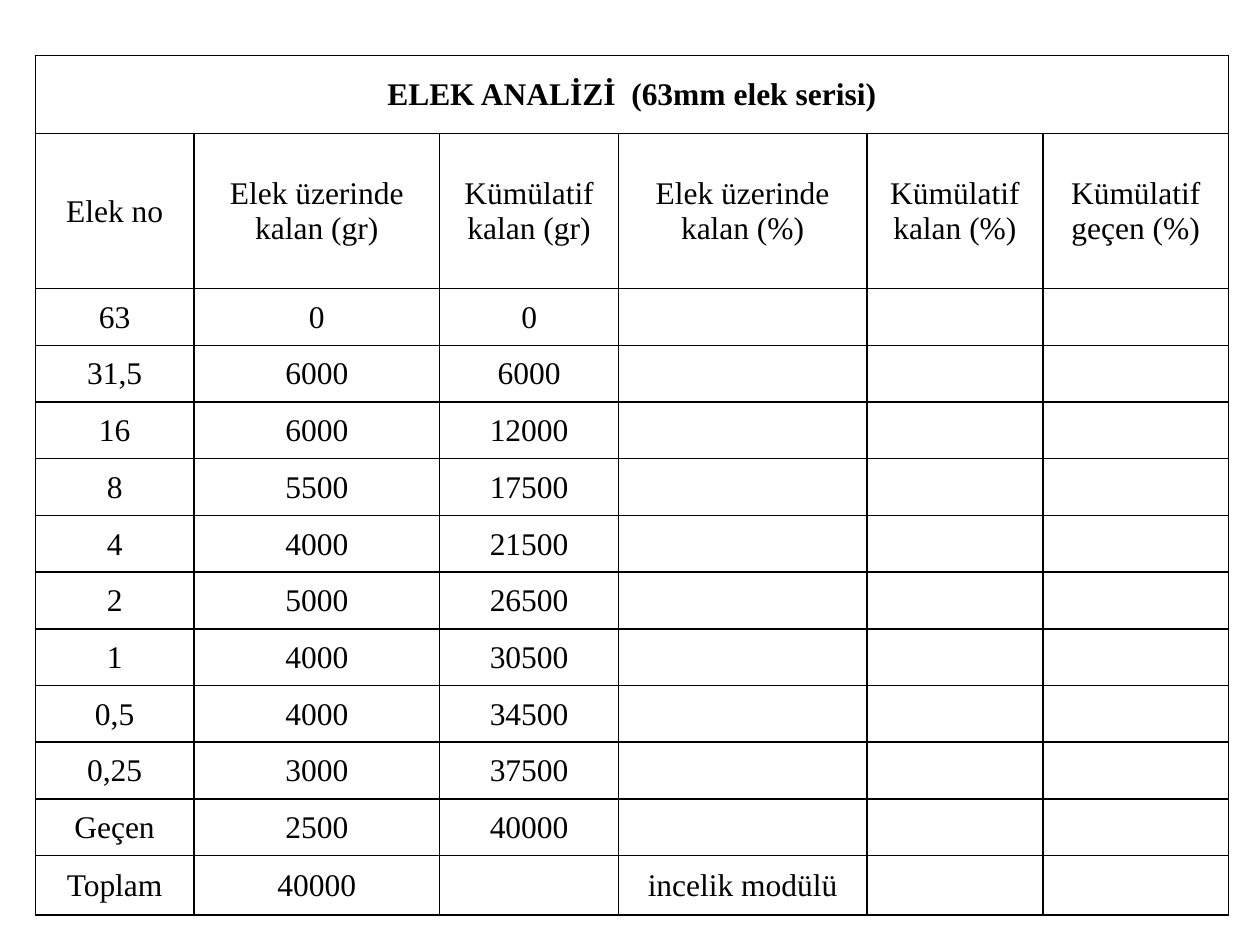
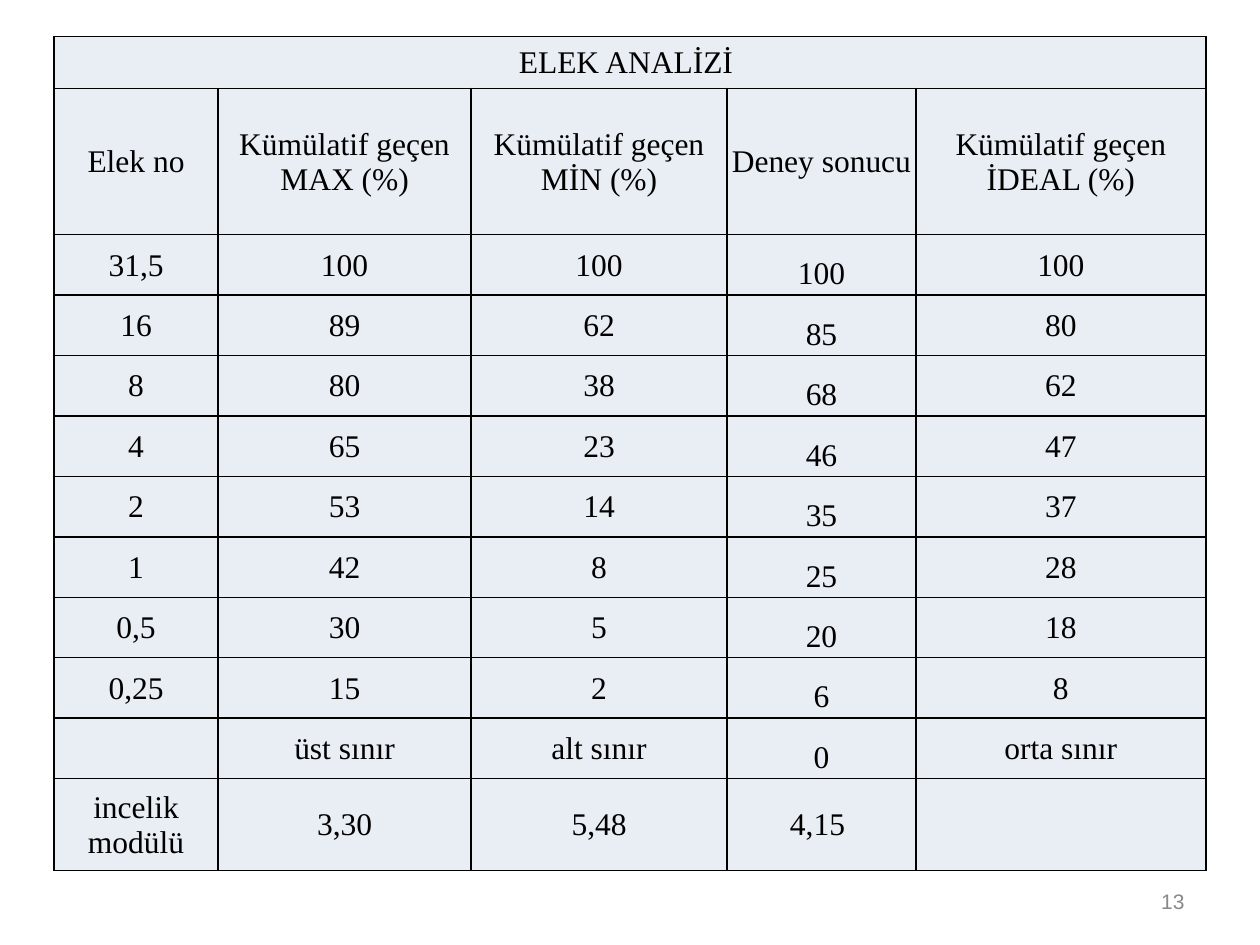
from dataclasses import dataclass
from itertools import accumulate

from lxml import etree
from pptx import Presentation
from pptx.dml.color import RGBColor
from pptx.enum.text import MSO_ANCHOR, PP_ALIGN
from pptx.oxml.ns import qn
from pptx.util import Inches, Pt

CENTER, RIGHT = PP_ALIGN.CENTER, PP_ALIGN.RIGHT
MIDDLE = MSO_ANCHOR.MIDDLE

COLORS = {"text": "000000", "border": "000000", "cell": "E9EDF4", "number": "898989"}
TABLE_FONT, NUMBER_FONT = "Times New Roman", "Arial"
SLIDE_WIDTH, SLIDE_HEIGHT = Inches(10), Inches(7.5)
BORDER_SIDES = ("a:lnL", "a:lnR", "a:lnT", "a:lnB")
HEADER_ROWS = 2


@dataclass(frozen=True)
class SieveTable:
    """A titled table; all lengths are percentages of the slide's size."""
    title: str
    headers: tuple[str, ...]
    body: list[tuple[str, ...]]
    left: float
    top: float
    columns: tuple[float, ...]
    rows: tuple[float, ...]
    fill: str | None = None
    bold_title: bool = False
    tall_column: int | None = None  # numbers here have 1.5 line spacing


def across(percent: float) -> int:
    return round(SLIDE_WIDTH * percent / 100)


def down(percent: float) -> int:
    return round(SLIDE_HEIGHT * percent / 100)


def format_text(paragraph, font: str, size: int, color: str, align, bold: bool = False) -> None:
    paragraph.alignment = align
    for run in paragraph.runs:
        run.font.name = font
        run.font.size = Pt(size)
        run.font.bold = bold
        run.font.color.rgb = RGBColor.from_string(COLORS[color])


def format_cell(cell, fill: str | None) -> None:
    cell.margin_left = cell.margin_right = cell.margin_top = Inches(0.01)
    cell.margin_bottom = 0
    cell.vertical_anchor = MIDDLE
    properties = cell._tc.get_or_add_tcPr()
    for side in BORDER_SIDES:
        line = etree.SubElement(properties, qn(side), w=str(Pt(1)))
        solid = etree.SubElement(line, qn("a:solidFill"))
        etree.SubElement(solid, qn("a:srgbClr"), val=COLORS["border"])
    if fill:
        cell.fill.solid()
        cell.fill.fore_color.rgb = RGBColor.from_string(COLORS[fill])
    else:
        cell.fill.background()


def add_sieve_table(slide, sieve: SieveTable) -> None:
    table = slide.shapes.add_table(
        len(sieve.rows), len(sieve.columns), across(sieve.left), down(sieve.top),
        across(sum(sieve.columns)), down(sum(sieve.rows))).table
    table.first_row = table.horz_banding = False
    for column, width in zip(table.columns, sieve.columns):
        column.width = across(width)
    for row, height in zip(table.rows, sieve.rows):
        row.height = down(height)
    table.cell(0, 0).merge(table.cell(0, len(sieve.columns) - 1))

    texts = [(sieve.title,), sieve.headers, *sieve.body]
    last_row = len(texts) - 1
    for row_index, row_texts in enumerate(texts):
        for column_index in range(len(sieve.columns)):
            cell = table.cell(row_index, column_index)
            format_cell(cell, sieve.fill)
            text = row_texts[column_index] if column_index < len(row_texts) else ""
            if not text:
                continue
            cell.text_frame.text = text
            paragraph = cell.text_frame.paragraphs[0]
            format_text(paragraph, TABLE_FONT, 18, "text", CENTER,
                        bold=sieve.bold_title and row_index == 0)
            if column_index == sieve.tall_column and HEADER_ROWS <= row_index < last_row:
                paragraph.line_spacing = 1.5


def add_slide_number(slide, number: int) -> None:
    box = slide.shapes.add_textbox(across(71.7), down(92.67), across(23.3), down(5.33))
    frame = box.text_frame
    frame.word_wrap = True
    frame.vertical_anchor = MIDDLE
    frame.text = str(number)
    format_text(frame.paragraphs[0], NUMBER_FONT, 12, "number", RIGHT)


def retained_rows() -> list[tuple[str, ...]]:
    """Sieve, retained and cumulative retained grams, then the total."""
    sieves = ("63", "31,5", "16", "8", "4", "2", "1", "0,5", "0,25", "Geçen")
    grams = (0, 6000, 6000, 5500, 4000, 5000, 4000, 4000, 3000, 2500)
    rows = [(name, str(retained), str(total))
            for name, retained, total in zip(sieves, grams, accumulate(grams))]
    return rows + [("Toplam", str(sum(grams)), "", "incelik modülü")]


RETAINED = SieveTable(
    title="ELEK ANALİZİ  (63mm elek serisi)",
    headers=("Elek no", "Elek üzerinde kalan (gr)", "Kümülatif kalan (gr)",
             "Elek üzerinde kalan (%)", "Kümülatif kalan (%)", "Kümülatif geçen (%)"),
    body=retained_rows(),
    left=2.8, top=5.87,
    columns=(12.6, 19.5, 14.2, 19.7, 14, 14.7),
    rows=(8.27, 16.4, *[6] * 10, 6.27),
    bold_title=True,
)

LIMITS = SieveTable(
    title="ELEK ANALİZİ ",
    headers=("Elek no", "Kümülatif geçen MAX (%)", "Kümülatif geçen MİN (%)",
             "Deney sonucu", "Kümülatif geçen İDEAL (%)"),
    body=[
        ("31,5", "100", "100", "100", "100"),
        ("16", "89", "62", "85", "80"),
        ("8", "80", "38", "68", "62"),
        ("4", "65", "23", "46", "47"),
        ("2", "53", "14", "35", "37"),
        ("1", "42", "8", "25", "28"),
        ("0,5", "30", "5", "20", "18"),
        ("0,25", "15", "2", "6", "8"),
        ("", "üst sınır", "alt sınır", "0", "orta sınır"),
        ("incelik modülü", "3,30", "5,48", "4,15 "),
    ],
    left=4.3, top=3.87,
    columns=(13, 20.1, 20.3, 15, 23),
    rows=(5.47, 15.47, *[6.4] * 9, 9.73),
    fill="cell", tall_column=3,
)


def main() -> None:
    presentation = Presentation()
    presentation.slide_width, presentation.slide_height = SLIDE_WIDTH, SLIDE_HEIGHT
    blank_layout = presentation.slide_layouts[6]

    add_sieve_table(presentation.slides.add_slide(blank_layout), RETAINED)

    limits_slide = presentation.slides.add_slide(blank_layout)
    add_slide_number(limits_slide, 13)
    add_sieve_table(limits_slide, LIMITS)

    presentation.save("out.pptx")


if __name__ == "__main__":
    main()
